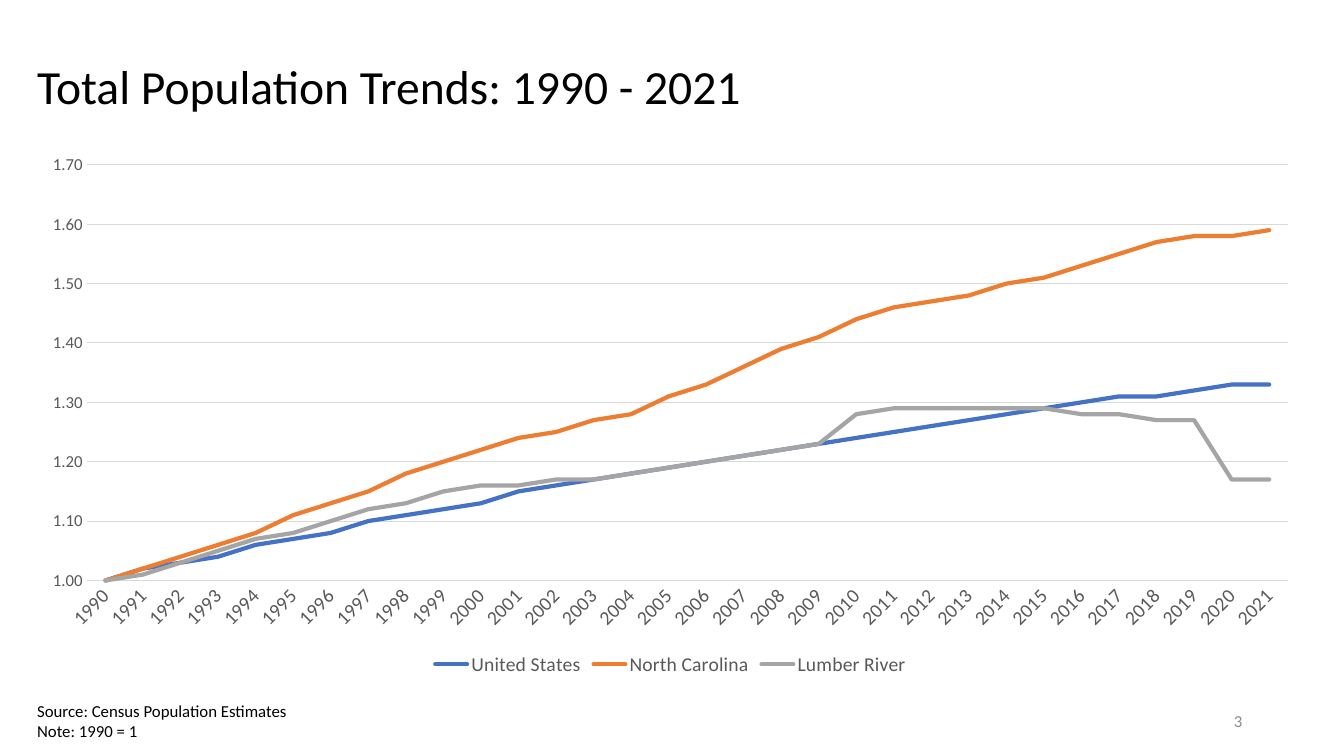
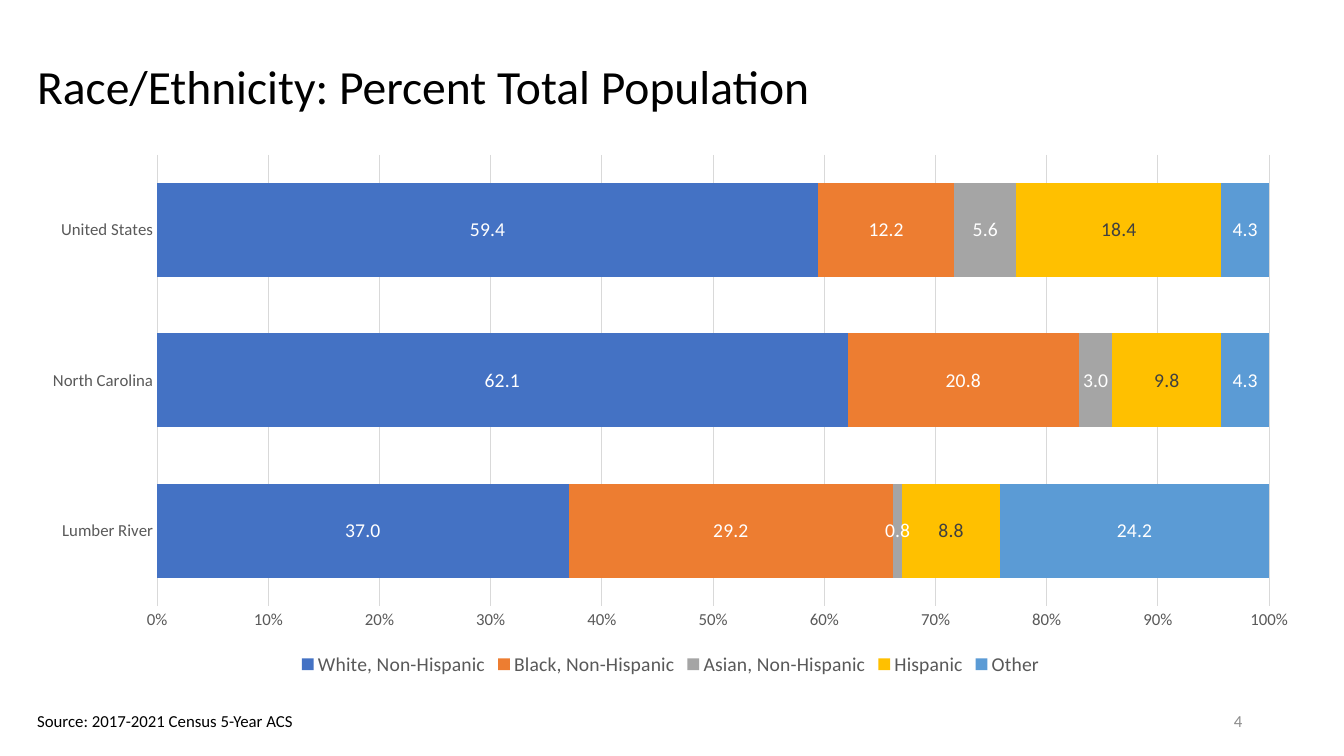
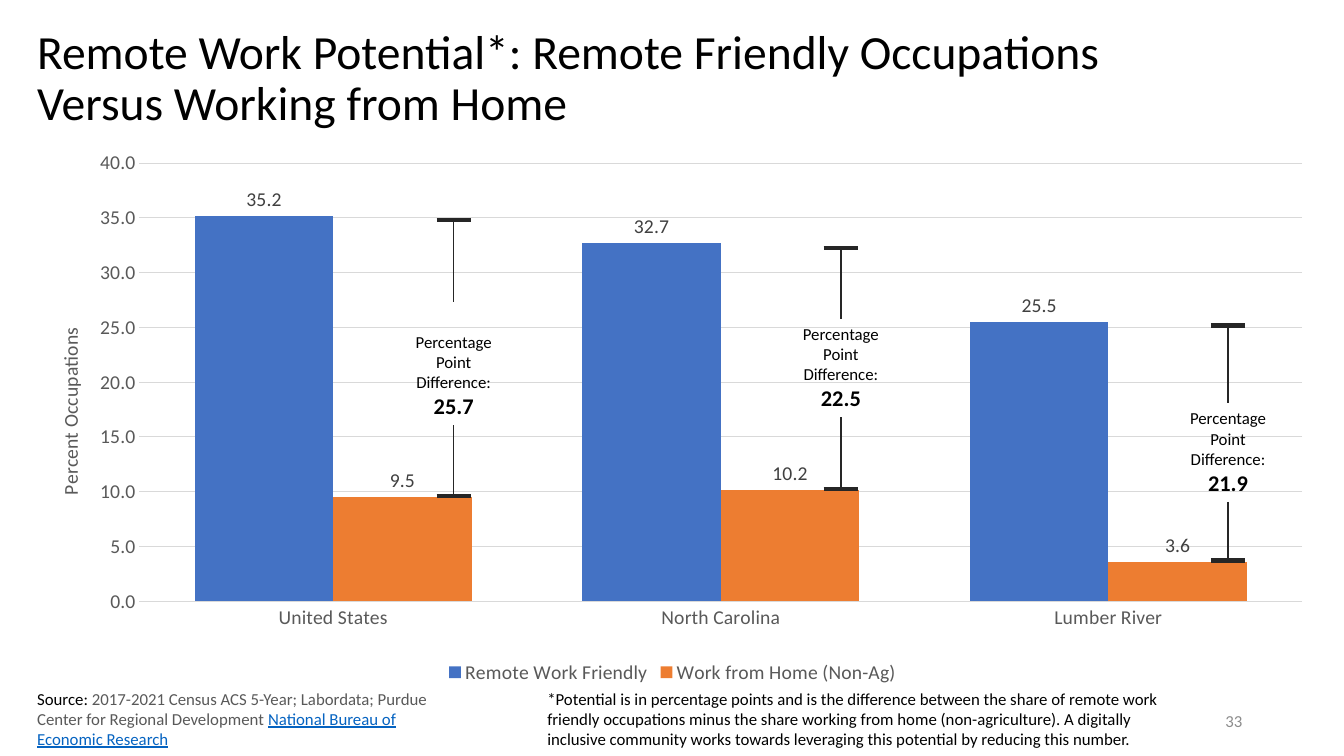
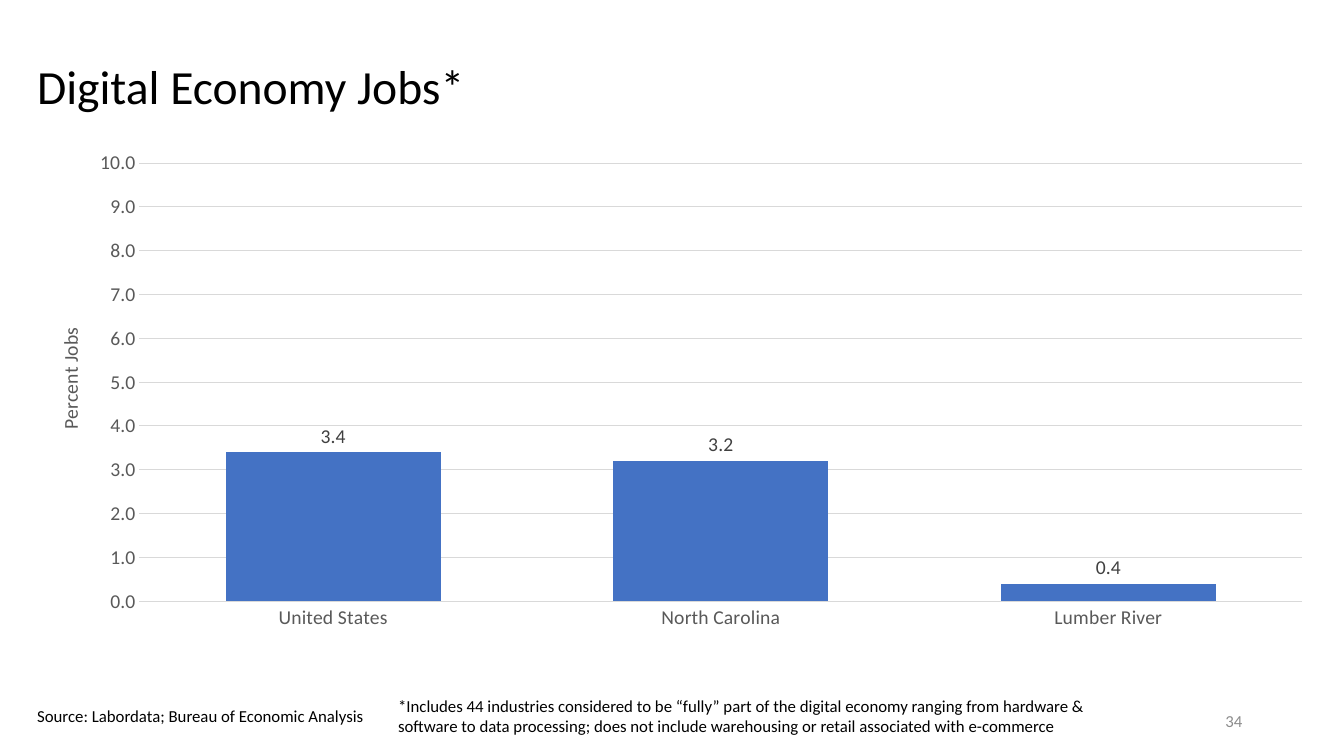
"""Build four slides on population, remote work and digital jobs."""
import dataclasses

import lxml.etree
import pptx
import pptx.chart.data
import pptx.dml.color
import pptx.enum.chart
import pptx.enum.shapes
import pptx.enum.text
import pptx.oxml.ns
import pptx.util

Inches = pptx.util.Inches
Pt = pptx.util.Pt
qn = pptx.oxml.ns.qn
ChartType = pptx.enum.chart.XL_CHART_TYPE
LabelPosition = pptx.enum.chart.XL_LABEL_POSITION
Align = pptx.enum.text.PP_ALIGN
Anchor = pptx.enum.text.MSO_ANCHOR


@dataclasses.dataclass(frozen=True)
class Theme:
    """Colours, type sizes and shared boxes of the deck."""
    font: str = "Calibri"
    ink: str = "000000"
    axis: str = "595959"
    label: str = "404040"
    paper: str = "FFFFFF"
    grid: str = "D9D9D9"
    bracket: str = "262626"
    number: str = "8C8C8C"
    link: str = "0563C1"
    series: tuple = ("4472C4", "ED7D31", "A5A5A5", "FFC000", "5B9BD5")
    title_size: int = 34
    value_size: int = 16
    chart_size: int = 14
    small_size: int = 12
    title_box: tuple = (0.27, 0.34, 12.76, 1.09)
    tall_title_box: tuple = (0.27, 0.15, 12.76, 1.28)
    number_box: tuple = (9.42, 6.95, 3, 0.4)
    wide_chart_box: tuple = (0.27, 1.43, 12.76, 5.32)
    column_chart_box: tuple = (0.27, 1.43, 12.8, 5.4)


THEME = Theme()
REGIONS = ("United States", "North Carolina", "Lumber River")


def rgb(colour):
    """Return the colour object of a hex string."""
    return pptx.dml.color.RGBColor.from_string(colour)


def set_font(font, size, colour, bold=False, underline=False):
    """Give a font its face, size, colour and emphasis."""
    font.name = THEME.font
    font.size = Pt(size)
    font.bold = bold
    font.color.rgb = rgb(colour)
    if underline:
        font.underline = True


def write_text(page, box, paragraphs, size=THEME.small_size, colour=THEME.ink,
               align=Align.LEFT, anchor=Anchor.TOP, spacing=None):
    """Write paragraphs of (text, format) spans into a text box and return it."""
    shape = page.shapes.add_textbox(*map(Inches, box))
    frame = shape.text_frame
    frame.word_wrap = True
    frame.vertical_anchor = anchor
    for index, spans in enumerate(paragraphs):
        para = frame.paragraphs[0] if index == 0 else frame.add_paragraph()
        para.alignment = align
        para.line_spacing = spacing
        for text, style in [(spans, {})] if isinstance(spans, str) else spans:
            for part, line in enumerate(text.split("\n")):
                if part:
                    para.add_line_break()
                if line:
                    span = para.add_run()
                    span.text = line
                    set_font(span.font, **{"size": size, "colour": colour, **style})
    return shape


def add_page(deck, title, number, title_box=THEME.title_box):
    """Add a blank slide with its title and slide number."""
    page = deck.slides.add_slide(deck.slide_layouts[6])
    write_text(page, title_box, [title], size=THEME.title_size,
               anchor=Anchor.MIDDLE, spacing=0.9)
    write_text(page, THEME.number_box, [str(number)], colour=THEME.number,
               align=Align.RIGHT, anchor=Anchor.MIDDLE)
    return page


def set_layout(parent, position, **values):
    """Fix the place of a chart part as shares of the chart."""
    layout = parent.find(qn("c:layout"))
    if layout is None:
        layout = lxml.etree.Element(qn("c:layout"))
        parent.insert(position, layout)
    manual = lxml.etree.SubElement(layout, qn("c:manualLayout"))
    for name, value in values.items():
        lxml.etree.SubElement(manual, qn("c:" + name)).set("val", str(value))


def style_axis(axis, size):
    """Style the labels of an axis and remove its tick marks."""
    axis.major_tick_mark = pptx.enum.chart.XL_TICK_MARK.NONE
    axis.minor_tick_mark = pptx.enum.chart.XL_TICK_MARK.NONE
    set_font(axis.tick_labels.font, size, THEME.axis)


def draw_chart(page, box, kind, categories, series, value_format,
               category_size=THEME.chart_size, value_size=THEME.chart_size,
               limits=(None, None), step=None, legend=True):
    """Add a chart with the axes, grid and legend of the deck."""
    data = pptx.chart.data.CategoryChartData()
    data.categories = categories
    for name, values in series:
        data.add_series(name, values)
    chart = page.shapes.add_chart(kind, *map(Inches, box), data).chart
    chart.has_title = False
    set_font(chart.font, THEME.chart_size, THEME.axis)
    style_axis(chart.category_axis, category_size)
    chart.category_axis.format.line.color.rgb = rgb(THEME.grid)
    chart.category_axis.format.line.width = Pt(0.75)
    axis = chart.value_axis
    style_axis(axis, value_size)
    axis.format.line.fill.background()
    axis.minimum_scale, axis.maximum_scale = limits
    axis.major_unit = step
    axis.tick_labels.number_format = value_format
    axis.tick_labels.number_format_is_linked = False
    axis.has_major_gridlines = True
    axis.major_gridlines.format.line.color.rgb = rgb(THEME.grid)
    axis.major_gridlines.format.line.width = Pt(0.75)
    chart.has_legend = legend
    if legend:
        chart.legend.position = pptx.enum.chart.XL_LEGEND_POSITION.BOTTOM
        chart.legend.include_in_layout = False
        set_font(chart.legend.font, THEME.chart_size, THEME.axis)
    return chart


def style_bars(chart, gap, overlap, label_colours, position):
    """Colour the bars and show their values."""
    plot = chart.plots[0]
    plot.gap_width = gap
    plot.overlap = overlap
    plot.vary_by_categories = False
    for series, fill, colour in zip(plot.series, THEME.series, label_colours):
        series.format.fill.solid()
        series.format.fill.fore_color.rgb = rgb(fill)
        labels = series.data_labels
        labels.show_value = True
        labels.number_format = "0.0"
        labels.number_format_is_linked = False
        labels.position = position
        set_font(labels.font, THEME.chart_size, colour)


def draw_columns(page, box, series, axis_title, **options):
    """Add a column chart by region with a titled value axis."""
    chart = draw_chart(page, box, ChartType.COLUMN_CLUSTERED, REGIONS, series,
                       "0.0", **options)
    style_bars(chart, 80, 0, [THEME.label] * len(series), LabelPosition.OUTSIDE_END)
    set_layout(chart.plots[0]._element.getparent(), 0, layoutTarget="inner",
               xMode="edge", yMode="edge", x=0.087, y=0.035, w=0.901, h=0.805)
    title = chart.value_axis.axis_title
    frame = title.text_frame
    frame._txBody.bodyPr.set("rot", "-5400000")
    frame._txBody.bodyPr.set("vert", "horz")
    span = frame.paragraphs[0].add_run()
    span.text = axis_title
    set_font(span.font, THEME.chart_size, THEME.axis)
    set_layout(title._element, 1, xMode="edge", yMode="edge", x=0.02, y=0.33)


def draw_line(page, start, end, width):
    """Add a straight line between two points and return it."""
    line = page.shapes.add_connector(pptx.enum.shapes.MSO_CONNECTOR.STRAIGHT,
                                     *map(Inches, (*start, *end)))
    line.line.color.rgb = rgb(THEME.bracket)
    line.line.width = Pt(width)
    lxml.etree.SubElement(line._element.spPr, qn("a:effectLst"))
    return line


def draw_bracket(page, centre, top, bottom, label_top, value, stem_end=None):
    """Mark the gap between two columns with a labelled bracket."""
    width, height, cap = 1.31, 0.98, 0.17
    label = write_text(
        page, (centre - width / 2, label_top, width, height),
        ["Percentage\nPoint",
         [("Difference:\n", {}), (value, {"size": THEME.value_size, "bold": True})]],
        align=Align.CENTER)
    for level in (top, bottom):
        draw_line(page, (centre - cap, level), (centre + cap, level), 3)
    upper = draw_line(page, (centre, top), (centre, stem_end or label_top), 1)
    if stem_end is None:
        upper.end_connect(label, 0)
    lower = draw_line(page, (centre, label_top + height), (centre, bottom), 1)
    lower.begin_connect(label, 2)


def build_population(deck):
    """Build the slide with the population lines."""
    page = add_page(deck, "Total Population Trends: 1990 - 2021", 3)
    series = [
        (REGIONS[0], (1, 1.02, 1.03, 1.04, 1.06, 1.07, 1.08, 1.1, 1.11, 1.12, 1.13,
                      1.15, 1.16, 1.17, 1.18, 1.19, 1.2, 1.21, 1.22, 1.23, 1.24, 1.25,
                      1.26, 1.27, 1.28, 1.29, 1.3, 1.31, 1.31, 1.32, 1.33, 1.33)),
        (REGIONS[1], (1, 1.02, 1.04, 1.06, 1.08, 1.11, 1.13, 1.15, 1.18, 1.2, 1.22,
                      1.24, 1.25, 1.27, 1.28, 1.31, 1.33, 1.36, 1.39, 1.41, 1.44, 1.46,
                      1.47, 1.48, 1.5, 1.51, 1.53, 1.55, 1.57, 1.58, 1.58, 1.59)),
        (REGIONS[2], (1, 1.01, 1.03, 1.05, 1.07, 1.08, 1.1, 1.12, 1.13, 1.15, 1.16,
                      1.16, 1.17, 1.17, 1.18, 1.19, 1.2, 1.21, 1.22, 1.23, 1.28, 1.29,
                      1.29, 1.29, 1.29, 1.29, 1.28, 1.28, 1.27, 1.27, 1.17, 1.17)),
    ]
    years = [str(year) for year in range(1990, 2022)]
    chart = draw_chart(page, THEME.wide_chart_box, ChartType.LINE, years, series,
                       "0.00", value_size=THEME.small_size, limits=(1, 1.7), step=0.1)
    labels = chart.category_axis._element.find(qn("c:txPr"))
    labels.find(qn("a:bodyPr")).set("rot", "-2700000")
    for line, colour in zip(chart.plots[0].series, THEME.series):
        line.smooth = False
        line.format.line.color.rgb = rgb(colour)
        line.format.line.width = Pt(3)
        line.format.line._ln.set("cap", "rnd")
    write_text(page, (0.27, 6.9, 3, 0.5),
               ["Source: Census Population Estimates", "Note: 1990 = 1"])


def build_ethnicity(deck):
    """Build the slide with the stacked bars."""
    page = add_page(deck, "Race/Ethnicity: Percent Total Population", 4)
    series = [
        ("White, Non-Hispanic", (37, 62.1, 59.4)),
        ("Black, Non-Hispanic", (29.2, 20.8, 12.2)),
        ("Asian, Non-Hispanic", (0.8, 3, 5.6)),
        ("Hispanic", (8.8, 9.8, 18.4)),
        ("Other", (24.2, 4.3, 4.3)),
    ]
    chart = draw_chart(page, THEME.wide_chart_box, ChartType.BAR_STACKED_100,
                       REGIONS[::-1], series, "0%",
                       category_size=THEME.small_size, value_size=THEME.small_size)
    label_colours = [THEME.label if name == "Hispanic" else THEME.paper
                     for name, _ in series]
    style_bars(chart, 60, 100, label_colours, LabelPosition.CENTER)
    write_text(page, (0.27, 7, 3, 0.3), ["Source: 2017-2021 Census 5-Year ACS"])


def build_remote_work(deck):
    """Build the slide that compares remote friendly jobs with home working."""
    page = add_page(deck, "Remote Work Potential*: Remote Friendly Occupations\n"
                          "Versus Working from Home", 33, THEME.tall_title_box)
    series = [("Remote Work Friendly", (35.2, 32.7, 25.5)),
              ("Work from Home (Non-Ag)", (9.5, 10.2, 3.6))]
    draw_columns(page, THEME.column_chart_box, series, "Percent Occupations")
    brackets = [(2.18, 4.92, 3.24, "25.7", 3), (2.46, 4.85, 3.16, "22.5"),
                (3.23, 5.56, 4, "21.9")]
    for index, bracket in enumerate(brackets):
        draw_bracket(page, 4.5 + 3.84 * index, *bracket)
    write_text(page, (0.27, 6.78, 4.4, 0.71), [[
        ("Source: ", {}),
        ("2017-2021 Census ACS 5-Year; Labordata; Purdue Center for Regional "
         "Development ", {"colour": THEME.axis}),
        ("National Bureau of Economic Research",
         {"colour": THEME.link, "underline": True})]])
    write_text(page, (5.33, 6.78, 6.54, 0.71), [
        "*Potential is in percentage points and is the difference between the share of "
        "remote work friendly occupations minus the share working from home "
        "(non-agriculture). A digitally inclusive community works towards leveraging "
        "this potential by reducing this number."])


def build_digital_jobs(deck):
    """Build the slide with the digital economy jobs."""
    page = add_page(deck, "Digital Economy Jobs*", 34)
    draw_columns(page, THEME.column_chart_box, [("Series 1", (3.4, 3.2, 0.4))],
                 "Percent Jobs", limits=(0, 10), step=1, legend=False)
    write_text(page, (0.27, 6.95, 3.5, 0.3),
               ["Source: Labordata; Bureau of Economic Analysis"])
    write_text(page, (3.85, 6.85, 7.07, 0.5), [
        "*Includes 44 industries considered to be “fully” part of the digital economy "
        "ranging from hardware & software to data processing; does not include "
        "warehousing or retail associated with e-commerce"])


def main():
    """Build and save the deck."""
    deck = pptx.Presentation()
    deck.slide_width = Inches(13.33)
    deck.slide_height = Inches(7.5)
    for build in (build_population, build_ethnicity, build_remote_work,
                  build_digital_jobs):
        build(deck)
    deck.save("out.pptx")


if __name__ == "__main__":
    main()
